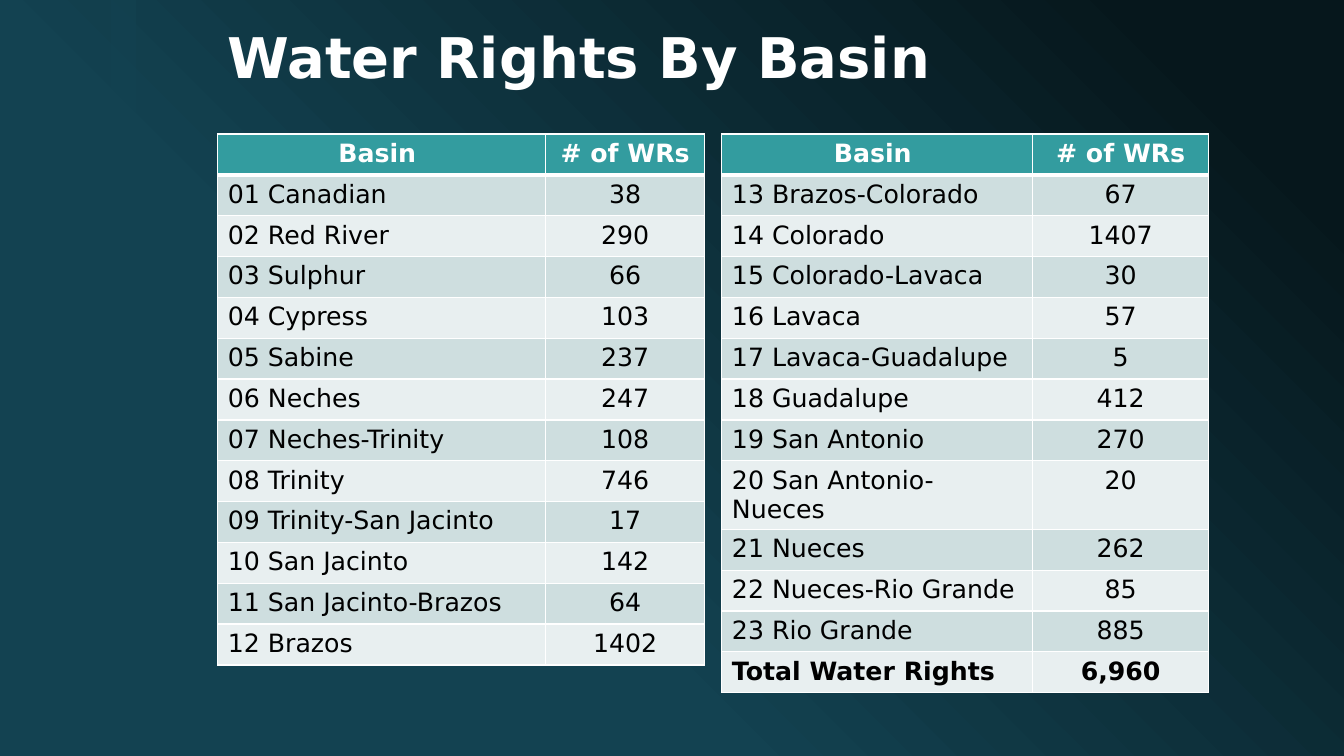
import pptx
import pptx.util
import pptx.dml.color
import pptx.enum.shapes
import pptx.enum.text
import pptx.oxml
import pptx.oxml.ns
import lxml.etree

Inches = pptx.util.Inches
ALIGN = pptx.enum.text.PP_ALIGN
FONT = "DejaVu Sans"
WHITE, BLACK = "FFFFFF", "000000"
NIGHT, DEEP_TEAL = "06171C", "134251"
HEADER_FILL, BANDS = "339C9F", ("CEDEDF", "E8EFF0")
HEADINGS = ("Basin ", "# of WRs")

FIRST_BASINS = [
    ("01 Canadian", "38"), ("02 Red River", "290"), ("03 Sulphur", "66"),
    ("04 Cypress", "103"), ("05 Sabine", "237"), ("06 Neches", "247"),
    ("07 Neches-Trinity", "108"), ("08 Trinity", "746"),
    ("09 Trinity-San Jacinto", "17"), ("10 San Jacinto", "142"),
    ("11 San Jacinto-Brazos", "64"), ("12 Brazos", "1402"),
]
LAST_BASINS = [
    ("13 Brazos-Colorado", "67"), ("14 Colorado", "1407"),
    ("15 Colorado-Lavaca", "30"), ("16 Lavaca", "57"),
    ("17 Lavaca-Guadalupe", "5"), ("18 Guadalupe", "412"),
    ("19 San Antonio", "270"), ("20 San Antonio-Nueces", "20"),
    ("21 Nueces", "262"), ("22 Nueces-Rio Grande", "85"),
    ("23 Rio Grande", "885"), ("Total Water Rights", "6,960"),
]


def color(hex_value):
    return pptx.dml.color.RGBColor.from_string(hex_value)


def apply(target, formats):
    for name, value in formats.items():
        setattr(target, name, value)


def write(paragraph, text, size, hex_value, bold, alignment):
    paragraph.text = text
    paragraph.alignment = alignment
    font = paragraph.runs[0].font
    apply(font, {"name": FONT, "size": pptx.util.Pt(size), "bold": bold})
    font.color.rgb = color(hex_value)


def set_borders(cell, widths):
    """Draw white cell edges; widths maps L, R, T, B to points."""
    properties = cell._tc.get_or_add_tcPr()
    for side, width in widths.items():
        properties.append(pptx.oxml.parse_xml(
            f'<a:ln{side} {pptx.oxml.ns.nsdecls("a")} w="{pptx.util.Pt(width)}">'
            f'<a:solidFill><a:srgbClr val="{WHITE}"/></a:solidFill></a:ln{side}>'))


def add_backdrop(slide, left, top, width, height):
    # Diagonal gradient, dark at the top right
    fill = slide.background.fill
    fill.gradient()
    fill.gradient_angle = 225
    for stop, (position, hex_value) in zip(
            fill.gradient_stops, ((0.1, NIGHT), (0.65, DEEP_TEAL))):
        stop.position = position
        stop.color.rgb = color(hex_value)

    # Translucent vertical strip
    strip = slide.shapes.add_shape(
        pptx.enum.shapes.MSO_SHAPE.RECTANGLE, left, top, width, height)
    strip.shadow.inherit = False
    strip.line.fill.background()
    strip.fill.solid()
    strip.fill.fore_color.rgb = color(DEEP_TEAL)
    shade = strip._element.spPr.find(".//" + pptx.oxml.ns.qn("a:srgbClr"))
    lxml.etree.SubElement(shade, pptx.oxml.ns.qn("a:alpha"), val="60000")


def add_title(slide, text, left, top, width, height):
    frame = slide.shapes.add_textbox(left, top, width, height).text_frame
    apply(frame, {
        "word_wrap": True,
        "vertical_anchor": pptx.enum.text.MSO_ANCHOR.BOTTOM,
        "margin_bottom": Inches(0.76),
    })
    paragraph = frame.paragraphs[0]
    write(paragraph, text, 40, WHITE, True, ALIGN.LEFT)
    paragraph.line_spacing = 0.9


def add_basin_table(slide, basins, left, top, width, height, name_width):
    rows = [HEADINGS] + basins
    table = slide.shapes.add_table(
        len(rows), len(HEADINGS), left, top, width, height).table
    table.columns[0].width = name_width
    table.columns[1].width = width - name_width

    for row_index, row in enumerate(rows):
        table.rows[row_index].height = height // len(rows)
        header = row_index == 0
        bold = header or row[0].startswith("Total")
        for column_index, text in enumerate(row):
            cell = table.cell(row_index, column_index)
            set_borders(cell, {"L": 1, "R": 1,
                               "T": 3 if row_index == 1 else 1,
                               "B": 3 if header else 1})
            cell.fill.solid()
            cell.fill.fore_color.rgb = color(
                HEADER_FILL if header else BANDS[(row_index - 1) % 2])
            centered = header or column_index == 1
            write(cell.text_frame.paragraphs[0], text, 18,
                  WHITE if header else BLACK, bold,
                  ALIGN.CENTER if centered else ALIGN.LEFT)


def main():
    presentation = pptx.Presentation()
    apply(presentation, {"slide_width": Inches(13.33),
                         "slide_height": Inches(7.5)})
    slide = presentation.slides.add_slide(presentation.slide_layouts[6])

    add_backdrop(slide, Inches(1.1), 0, Inches(0.25), Inches(7.5))
    for basins, left, name_width in ((LAST_BASINS, 7.16, 3.08),
                                     (FIRST_BASINS, 2.16, 3.25)):
        add_basin_table(slide, basins, Inches(left), Inches(1.33),
                        Inches(4.83), Inches(5.27), Inches(name_width))
    add_title(slide, "Water Rights By Basin",
              Inches(2.16), Inches(0.33), Inches(10), Inches(1.33))

    presentation.save("out.pptx")


if __name__ == "__main__":
    main()
